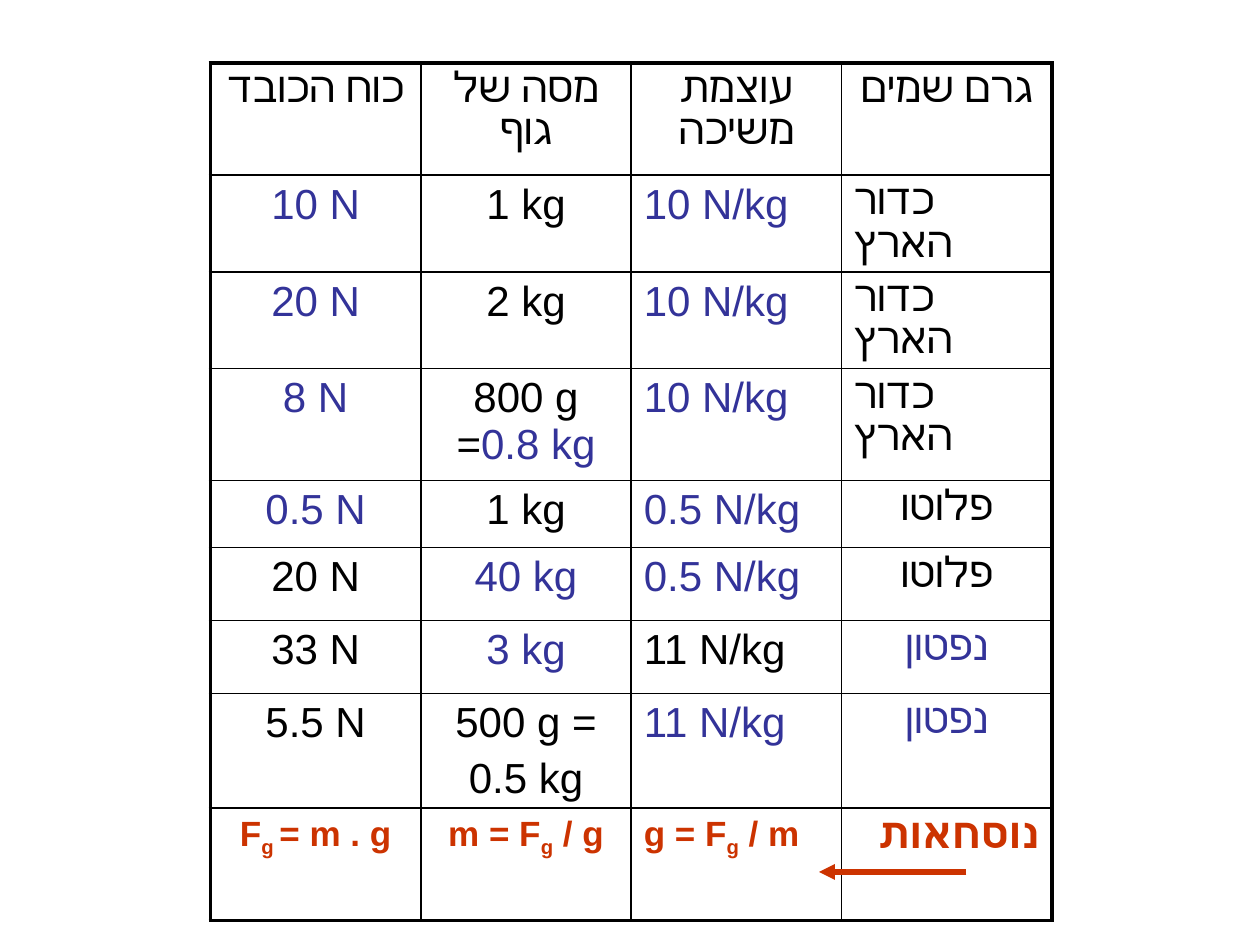
"""Build a slide with a table of gravity on several celestial bodies."""
import dataclasses

import lxml.etree
import pptx
import pptx.dml.color
import pptx.enum.shapes
import pptx.enum.text
import pptx.oxml.ns
import pptx.util

Inches = pptx.util.Inches
Pt = pptx.util.Pt
ALIGN = pptx.enum.text.PP_ALIGN
qn = pptx.oxml.ns.qn


@dataclasses.dataclass(frozen=True)
class Theme:
    font: str = "Arial"
    given: str = "000000"
    answer: str = "333399"
    formula: str = "CC3300"
    body: float = 24
    formula_size: float = 20
    outer: float = 2.25
    inner: float = 1
    arrow: float = 3


@dataclasses.dataclass
class Cell:
    lines: list
    align: int = ALIGN.CENTER
    size: float = Theme.body
    bold: bool = False
    rtl: bool = False


def given(*lines, **style):
    return Cell([[(line, Theme.given, False)] for line in lines], **style)


def answer(text, **style):
    return Cell([[(text, Theme.answer, False)]], **style)


def formula(*pieces, size=Theme.formula_size, **style):
    runs = [(text, Theme.formula, i % 2 == 1) for i, text in enumerate(pieces)]
    return Cell([runs], size=size, bold=True, **style)


class SlideBuilder:
    def __init__(self, prs, theme):
        self.theme = theme
        self.slide = prs.slides.add_slide(prs.slide_layouts[6])

    def color(self, value):
        return pptx.dml.color.RGBColor.from_string(value)

    def table(self, left, top, col_width, heights, rows):
        n_rows, n_cols = len(rows), len(rows[0])
        sp = self.slide.shapes.add_table(
            n_rows, n_cols, Inches(left), Inches(top),
            Inches(col_width * n_cols), Inches(sum(heights)))
        table = sp.table
        table.first_row = table.horz_banding = False
        for column in table.columns:
            column.width = Inches(col_width)
        for i, (height, row) in enumerate(zip(heights, rows)):
            table.rows[i].height = Inches(height)
            for j, content in enumerate(row):
                cell = table.cell(i, j)
                self.text(cell.text_frame, content)
                edges = {"L": j == 0, "R": j == n_cols - 1,
                         "T": i == 0, "B": i == n_rows - 1}
                self.borders(cell, edges)
                cell.fill.background()

    def text(self, tf, content):
        for i, runs in enumerate(content.lines):
            p = tf.add_paragraph() if i else tf.paragraphs[0]
            p.alignment = content.align
            p.space_before = Pt(content.size * 0.2)
            p.font.name = self.theme.font
            p.font.size = Pt(content.size)
            p.font.bold = content.bold
            if content.rtl:
                p._p.get_or_add_pPr().set("rtl", "1")
            for text, color, subscript in runs:
                r = p.add_run()
                r.text = text
                r.font.color.rgb = self.color(color)
                if subscript:
                    r.font._element.set("baseline", "-25000")

    def borders(self, cell, edges):
        tc_pr = cell._tc.get_or_add_tcPr()
        for side, is_outer in edges.items():
            width = self.theme.outer if is_outer else self.theme.inner
            ln = lxml.etree.SubElement(tc_pr, qn(f"a:ln{side}"), w=str(int(Pt(width))))
            fill = lxml.etree.SubElement(ln, qn("a:solidFill"))
            lxml.etree.SubElement(fill, qn("a:srgbClr"), val=self.theme.given)

    def arrow(self, x1, y1, x2, y2):
        line = self.slide.shapes.add_connector(
            pptx.enum.shapes.MSO_CONNECTOR.STRAIGHT,
            Inches(x1), Inches(y1), Inches(x2), Inches(y2))
        line.line.color.rgb = self.color(self.theme.formula)
        line.line.width = Pt(self.theme.arrow)
        ln = line._element.spPr.find(qn("a:ln"))
        lxml.etree.SubElement(ln, qn("a:tailEnd"), type="triangle")
        lxml.etree.SubElement(line._element.spPr, qn("a:effectLst"))


def main():
    prs = pptx.Presentation()
    prs.slide_width, prs.slide_height = Inches(10), Inches(7.5)
    builder = SlideBuilder(prs, Theme())

    left = ALIGN.LEFT
    headings = ["כוח הכובד", "מסה של גוף", "עוצמת משיכה", "גרם שמים"]
    earth = given("כדור הארץ", align=left)
    earth_pull = answer("10 N/kg", align=left)
    pluto = given("פלוטו")
    pluto_pull = answer("0.5 N/kg", align=left)
    neptune = answer("נפטון")
    converted = Cell([[("800 g =", Theme.given, False), ("0.8 kg", Theme.answer, False)]])
    rows = [
        [given(heading, rtl=True) for heading in headings],
        [answer("10 N"), given("1 kg"), earth_pull, earth],
        [answer("20 N"), given("2 kg"), earth_pull, earth],
        [answer("8 N"), converted, earth_pull, earth],
        [answer("0.5 N"), given("1 kg"), pluto_pull, pluto],
        [given("20 N"), answer("40 kg"), pluto_pull, pluto],
        [given("33 N"), answer("3 kg"), given("11 N/kg", align=left), neptune],
        [given("5.5 N"), given("500 g =", "0.5 kg"), answer("11 N/kg", align=left), neptune],
        [formula("F", "g ", "= m . g"), formula("m = F", "g", " / g"),
         formula("g = F", "g", " / m", align=left),
         formula("נוסחאות", size=Theme.body, align=ALIGN.RIGHT)],
    ]
    heights = [0.89, 0.6, 0.58, 0.89, 0.53, 0.58, 0.58, 0.58, 0.89]
    builder.table(1.67, 0.5, 1.67, heights, rows)
    builder.arrow(7.67, 6.92, 6.5, 6.92)
    prs.save("out.pptx")


if __name__ == "__main__":
    main()
